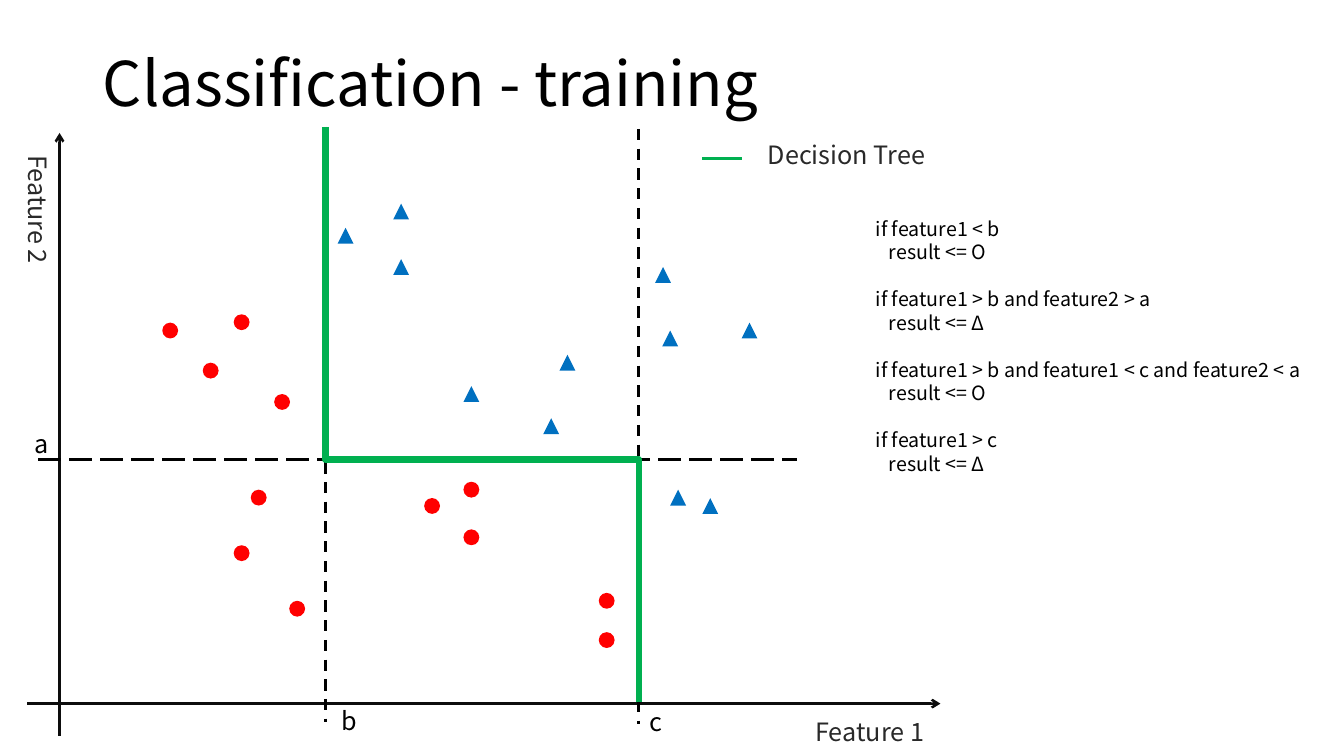
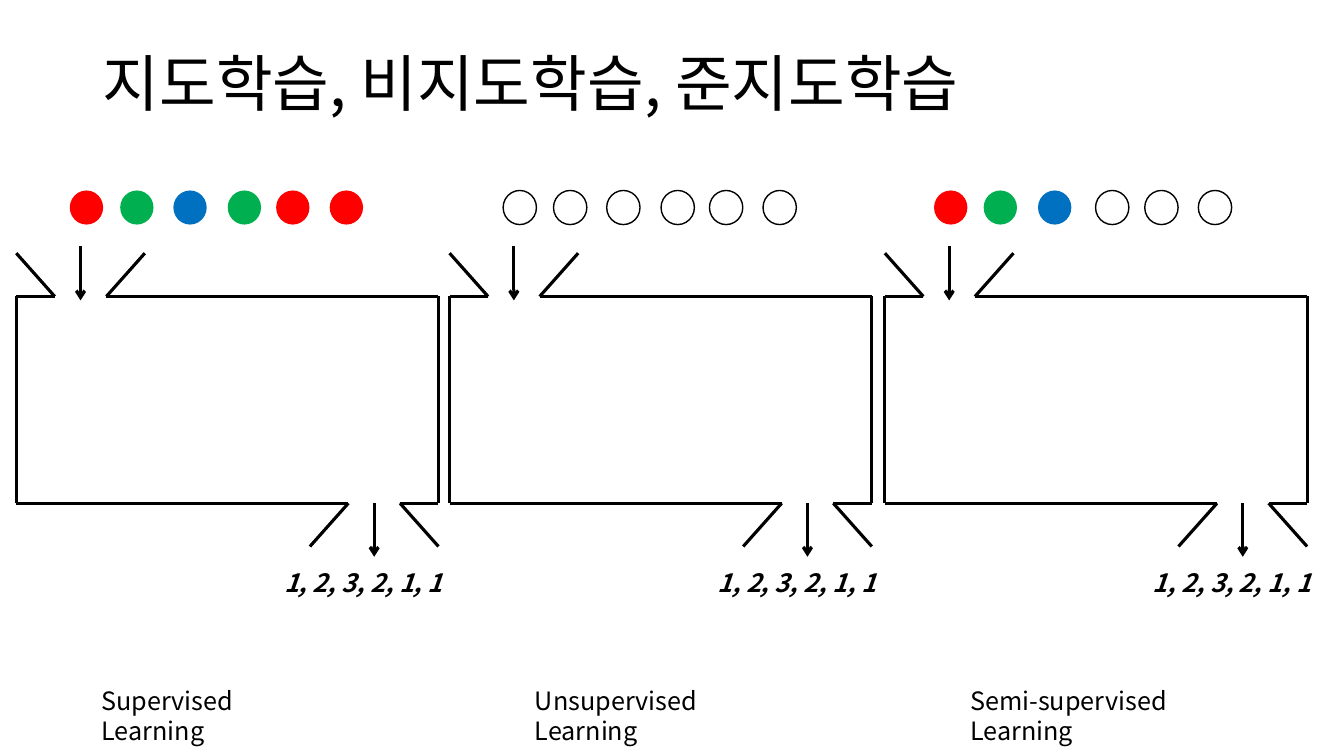
from lxml import etree
from pptx import Presentation
from pptx.dml.color import RGBColor
from pptx.enum import dml, shapes, text
from pptx.oxml.ns import qn
from pptx.util import Cm, Pt

FONT = "Noto Sans CJK KR"
COLORS = {
    "black": "000000",
    "axis": "0D0D0D",
    "label": "292929",
    "red": "FF0000",
    "green": "00B050",
    "blue": "0070C0",
}
LINE_HEIGHT = 1.2

# Marker corners in cm, measured from the top of the vertical axis
CIRCLES = [
    (4.39, 4.57), (3.61, 5.79), (2.59, 4.78), (4.82, 8.99),
    (10.18, 8.79), (9.19, 9.2), (10.18, 9.99), (5.79, 11.79),
    (13.59, 12.58), (4.39, 10.39), (5.41, 6.58), (13.59, 11.59),
]
TRIANGLES = [
    (8.41, 1.78), (8.41, 3.18), (12.6, 5.59), (12.19, 7.19),
    (15.39, 8.99), (16.2, 9.2), (15.19, 4.98), (7.01, 2.39),
    (10.18, 6.38), (15.01, 3.38), (17.19, 4.78),
]
RULES = [
    ("if feature1 < b", "result <= O"),
    ("if feature1 > b and feature2 > a", "result <= Δ"),
    ("if feature1 > b and feature1 < c and feature2 < a", "result <= O"),
    ("if feature1 > c", "result <= Δ"),
]

EVEN_BALLS = [1.35, 2.62, 3.96, 5.33, 6.55, 7.9]
SPLIT_BALLS = [1.24, 2.49, 3.86, 5.31, 6.55, 7.9]
# Left edge, caption, ball positions, ball colours (None is an unlabelled ball)
MACHINES = [
    (0.41, ["Supervised", "Learning"], EVEN_BALLS,
     ["red", "green", "blue", "green", "red", "red"]),
    (11.33, ["Unsupervised", "Learning"], EVEN_BALLS, [None] * 6),
    (22.3, ["Semi-supervised", "Learning"], SPLIT_BALLS,
     ["red", "green", "blue", None, None, None]),
]


def rgb(name):
    return RGBColor.from_string(COLORS[name])


def add_text(s, x, y, w, h, lines, size=18, color="black", spacing=LINE_HEIGHT):
    """Add a text box with one paragraph per line."""
    tf = s.shapes.add_textbox(Cm(x), Cm(y), Cm(w), Cm(h)).text_frame
    tf.word_wrap = True
    for i, line in enumerate(lines):
        p = tf.paragraphs[0] if i == 0 else tf.add_paragraph()
        p.text = line
        p.line_spacing = Pt(round(size * spacing, 1))
        p.font.size = Pt(size)
        p.font.color.rgb = rgb(color)
        p.font.name = FONT
        etree.SubElement(p._p.pPr.find(qn("a:defRPr")), qn("a:ea"), typeface=FONT)
    return tf


def add_title(s, title):
    tf = add_text(s, 2.34, 1.02, 29.2, 2.25, [title], 44, spacing=0.9 * LINE_HEIGHT)
    tf.vertical_anchor = text.MSO_ANCHOR.MIDDLE


def add_line(parent, x1, y1, x2, y2, color="black", width=2.25, dash=None,
             arrow=False, kind=shapes.MSO_CONNECTOR.STRAIGHT):
    c = parent.shapes.add_connector(kind, Cm(x1), Cm(y1), Cm(x2), Cm(y2))
    c.line.color.rgb = rgb(color)
    c.line.width = Pt(width)
    if dash:
        c.line.dash_style = dash
    spPr = c._element.spPr
    if arrow:
        etree.SubElement(spPr.find(qn("a:ln")), qn("a:tailEnd"), type="arrow")
    etree.SubElement(spPr, qn("a:effectLst"))
    return c


def add_marker(s, kind, x, y, w, h, color):
    """Add a filled marker, or a black outline if there is no colour."""
    sp = s.shapes.add_shape(kind, Cm(x), Cm(y), Cm(w), Cm(h))
    sp.shadow.inherit = False
    if color:
        sp.fill.solid()
        sp.fill.fore_color.rgb = rgb(color)
        sp.line.fill.background()
    else:
        sp.fill.background()
        sp.line.color.rgb = rgb("black")
        sp.line.width = Pt(1)


def add_step(s, x1, y1, x2, y2, bend_y):
    """Add an elbow that runs down, across at bend_y, and down again."""
    w, h = y2 - y1, x2 - x1
    left, top = (x1 + x2 - w) / 2, (y1 + y2 - h) / 2
    c = add_line(s, left, top, left + w, top + h, "green", 4.5,
                 kind=shapes.MSO_CONNECTOR.ELBOW)
    spPr = c._element.spPr
    xfrm = spPr.find(qn("a:xfrm"))
    xfrm.set("rot", str(270 * 60000))
    xfrm.set("flipH", "1")
    bend = round((bend_y - y1) / w * 100000)
    etree.SubElement(spPr.find(qn("a:prstGeom")).find(qn("a:avLst")),
                     qn("a:gd"), name="adj1", fmla=f"val {bend}")


def add_plot(s, x, y):
    """Draw the scatter plot; x, y is the top of the vertical axis."""
    base, a, b, c = y + 14.38, y + 8.23, x + 6.7, x + 14.6
    add_line(s, x, y + 15.19, x, y, "axis", 1.75, arrow=True)
    add_line(s, x - 0.81, base, x + 22.2, base, "axis", 1.75, arrow=True)

    tf = add_text(s, x - 1.3, y + 0.31, 1.27, 3.5, ["Feature 2"], color="label")
    tf._txBody.bodyPr.set("vert", "eaVert")
    add_text(s, x + 18.8, y + 14.58, 3.6, 1.02, ["Feature 1"], color="label")

    for kind, color, points in (
        (shapes.MSO_SHAPE.OVAL, "red", CIRCLES),
        (shapes.MSO_SHAPE.ISOSCELES_TRIANGLE, "blue", TRIANGLES),
    ):
        for dx, dy in points:
            add_marker(s, kind, x + dx, y + dy, 0.4, 0.4, color)

    dash = dml.MSO_LINE.DASH
    add_line(s, b, y - 0.15, b, y + 14.84, width=2, dash=dash)
    add_line(s, x - 0.53, a, x + 18.59, a, width=2, dash=dml.MSO_LINE.LONG_DASH)
    add_line(s, c, y - 0.1, c, y + 14.89, width=2, dash=dash)
    for name, left, top in (("a", x - 0.89, a - 0.91),
                            ("b", b + 0.16, base - 0.08),
                            ("c", c + 0.03, base - 0.05)):
        add_text(s, left, top, 1, 1.02, [name])
    add_step(s, b, y - 0.15, c, base - 0.05, a)


def add_legend(s, x, y):
    add_line(s, x, y + 0.61, x + 0.99, y + 0.61, "green", 2)
    add_text(s, x + 1.4, y, 5, 1.02, ["Decision Tree"], color="label")


def add_rules(s, x, y):
    size = 14
    lines = [line for rule in RULES for line in rule]
    tf = add_text(s, x, y, 11.84, 6.83, lines, size)
    for i, p in enumerate(tf.paragraphs):
        if i % 2:
            p._p.pPr.set("marL", str(Cm(0.33)))
        elif i:
            p.space_before = Pt(round(size * LINE_HEIGHT, 1))


def add_machine(s, x, y, caption, balls, colors):
    """Draw a box with an inlet and an outlet; x, y is its top left corner."""
    w, h = 10.64, 5.21
    lip, mouth, flare = 0.97, 1.3, 1.09
    inlet = lip + mouth / 2

    half = [
        (0, -flare, lip, 0),
        (2 * lip + mouth, -flare, lip + mouth, 0),
        (lip + mouth, 0, w, 0),
        (w, 0, w, h),
        (lip, 0, 0, 0),
    ]
    outline = s.shapes.add_group_shape()
    for x1, y1, x2, y2 in half:
        add_line(outline, x + x1, y + y1, x + x2, y + y2)
        # The lower half is the upper half turned by 180 degrees
        add_line(outline, x + w - x1, y + h - y1, x + w - x2, y + h - y2)

    add_line(s, x + inlet, y - 1.27, x + inlet, y + 0.1, arrow=True)
    add_line(s, x + w - inlet, y + h, x + w - inlet, y + h + 1.35, arrow=True)
    for dx, color in zip(balls, colors):
        add_marker(s, shapes.MSO_SHAPE.OVAL, x + dx, y - 2.67, 0.84, 0.86, color)

    result = add_text(s, x + 6.5, y + h + 1.5, 5, 1.02, ["1, 2, 3, 2, 1, 1"])
    result.paragraphs[0].font.bold = True
    result.paragraphs[0].font.italic = True
    add_text(s, x + 1.9, y + 9.68, 7, 1.8, caption)


def add_training_slide(s):
    add_title(s, "Classification - training")
    add_plot(s, 1.5, 3.35)
    add_legend(s, 17.7, 3.38)
    add_rules(s, 21.82, 5.33)


def add_learning_slide(s):
    add_title(s, "지도학습, 비지도학습, 준지도학습")
    for x, caption, balls, colors in MACHINES:
        add_machine(s, x, 7.47, caption, balls, colors)


def main():
    prs = Presentation()
    prs.slide_width, prs.slide_height = Cm(33.87), Cm(19.05)
    for build in (add_training_slide, add_learning_slide):
        build(prs.slides.add_slide(prs.slide_layouts[6]))
    prs.save("out.pptx")


if __name__ == "__main__":
    main()
